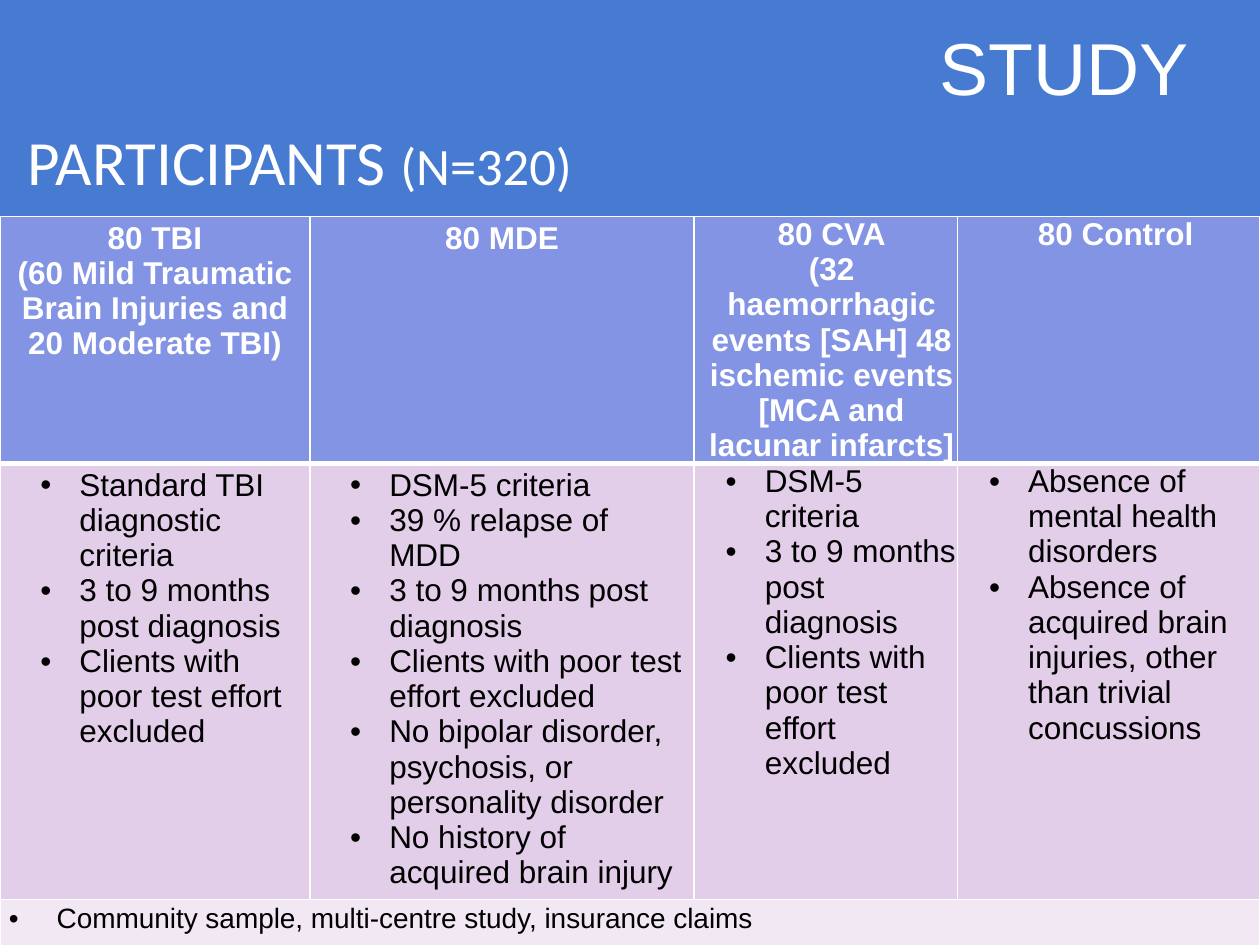
from dataclasses import dataclass

from lxml.etree import SubElement
from pptx import Presentation
from pptx.dml.color import RGBColor
from pptx.enum.shapes import MSO_SHAPE as Shape
from pptx.enum.text import MSO_ANCHOR as Anchor, MSO_AUTO_SIZE as AutoSize, PP_ALIGN as Align
from pptx.oxml import parse_xml
from pptx.oxml.ns import nsdecls, qn
from pptx.util import Inches, Pt

WIDTH, HEIGHT = 10, 7.5
BLUE, WHITE, BLACK = "477BD1", "FFFFFF", "000000"
HEADER, BODY, FOOTER = "8394E4", "E3CEE9", "F1E8F4"
COLUMN_SHARES = (0.246, 0.305, 0.209, 0.24)
ROW_HEIGHTS = (1.58, 3.46, 0.53)


@dataclass
class Group:
    heading: list[str]
    criteria: list[str]
    heading_indent: float = 0
    padded: bool = True


@dataclass
class Style:
    size: float
    color: str
    bold: bool = False
    align: Align = Align.LEFT
    margin: float = 0
    hanging: float = 0
    bullet: bool = False


EFFORT = "Clients with poor test effort excluded"
MONTHS = "3 to 9 months post diagnosis"
GROUPS = [
    Group(["80 TBI", "(60 Mild Traumatic Brain Injuries and 20 Moderate TBI)"],
          ["Standard TBI diagnostic criteria", MONTHS, EFFORT]),
    Group(["80 MDE"],
          ["DSM-5 criteria", "39 % relapse of MDD", MONTHS, EFFORT,
           "No bipolar disorder, psychosis, or personality disorder",
           "No history of acquired brain injury"]),
    Group(["80 CVA", "(32 haemorrhagic events [SAH] 48 ischemic events "
           "[MCA and lacunar infarcts]"],
          ["DSM-5 criteria", MONTHS, EFFORT], 0.09, False),
    Group(["80 Control"],
          ["Absence of mental health disorders",
           "Absence of acquired brain injuries, other than trivial concussions"],
          0.11, False),
]
SAMPLE = "Community sample, multi-centre study, insurance claims"


def rgb(color: str) -> RGBColor:
    return RGBColor.from_string(color)


def paint(part, color: str) -> None:
    part.fill.solid()
    part.fill.fore_color.rgb = rgb(color)


def place(shape, left: float, top: float, width: float, height: float) -> None:
    """Position a shape by shares of the slide's size."""
    shape.left, shape.width = Inches(left * WIDTH), Inches(width * WIDTH)
    shape.top, shape.height = Inches(top * HEIGHT), Inches(height * HEIGHT)


def add_run(paragraph, text: str, size: float, color: str, font: str = "Arial",
            bold: bool = False) -> None:
    run = paragraph.add_run()
    run.text = text
    run.font.size, run.font.name, run.font.bold = Pt(size), font, bold
    run.font.color.rgb = rgb(color)


def fill_cell(cell, lines: list[str], style: Style, fill: str, padded: bool = True) -> None:
    paint(cell, fill)
    cell.margin_left = cell.margin_right = Inches(0.07 if padded else 0)
    cell.margin_top = cell.margin_bottom = Inches(0.03 if padded else 0)
    frame = cell.text_frame
    for index, line in enumerate(lines):
        paragraph = frame.add_paragraph() if index else frame.paragraphs[0]
        paragraph.alignment = style.align
        properties = paragraph._p.get_or_add_pPr()
        properties.set("marL", str(Inches(style.margin)))
        properties.set("indent", str(Inches(-style.hanging)))
        if style.bullet:
            SubElement(properties, qn("a:buFont")).set("typeface", "Arial")
            SubElement(properties, qn("a:buChar")).set("char", "•")
        add_run(paragraph, line, style.size, style.color, bold=style.bold)


def set_borders(cell, top: float, bottom: float) -> None:
    properties = cell._tc.get_or_add_tcPr()
    widths = {"lnL": 1, "lnR": 1, "lnT": top, "lnB": bottom}
    for index, (side, width) in enumerate(widths.items()):
        properties.insert(index, parse_xml(
            f'<a:{side} {nsdecls("a")} w="{Pt(width)}"><a:solidFill>'
            f'<a:srgbClr val="{WHITE}"/></a:solidFill></a:{side}>'))


def add_participants(slide) -> None:
    table = slide.shapes.add_table(
        len(ROW_HEIGHTS), len(GROUPS), 0, Inches(1.72),
        Inches(WIDTH), Inches(sum(ROW_HEIGHTS))).table
    for column, share in zip(table.columns, COLUMN_SHARES):
        column.width = Inches(share * WIDTH)
    for row, height in zip(table.rows, ROW_HEIGHTS):
        row.height = Inches(height)

    # Group headings above their criteria
    criteria_style = Style(18, BLACK, margin=0.56, hanging=0.31, bullet=True)
    for column, group in enumerate(GROUPS):
        heading_style = Style(18, WHITE, True, Align.CENTER, group.heading_indent)
        fill_cell(table.cell(0, column), group.heading, heading_style, HEADER, group.padded)
        fill_cell(table.cell(1, column), group.criteria, criteria_style, BODY, group.padded)

    # Sample description across all groups
    sample = table.cell(2, 0)
    sample.merge(table.cell(2, len(GROUPS) - 1))
    fill_cell(sample, [SAMPLE], Style(16, BLACK, margin=0.38, hanging=0.38, bullet=True), FOOTER)

    # White grid, heavier under the headings
    for index, row in enumerate(table.rows):
        for cell in row.cells:
            set_borders(cell, 3 if index == 1 else 1, 3 if index == 0 else 1)


def main() -> None:
    deck = Presentation()
    deck.slide_width, deck.slide_height = Inches(WIDTH), Inches(HEIGHT)
    slide = deck.slides.add_slide(deck.slide_layouts[5])
    paint(slide.background, BLUE)

    # Title
    title = slide.shapes.title
    place(title, 0.012, 0.11, 0.85, 0.12)
    paint(title, BLUE)
    title.text_frame.auto_size = AutoSize.NONE
    title.text_frame.vertical_anchor = Anchor.MIDDLE
    heading = title.text_frame.paragraphs[0]
    heading.alignment = Align.LEFT
    add_run(heading, "PARTICIPANTS ", 36, WHITE, "Calibri")
    add_run(heading, "(N=320)", 30, WHITE, "Calibri")

    add_participants(slide)

    # Section label
    section = slide.shapes.add_shape(Shape.RECTANGLE, 0, 0, 0, 0)
    place(section, 0.736, 0.017, 0.252, 0.108)
    paint(section, BLUE)
    section.line.fill.background()
    section.shadow.inherit = False
    section.text_frame.word_wrap = True
    section.text_frame.auto_size = AutoSize.SHAPE_TO_FIT_TEXT
    section.text_frame.vertical_anchor = Anchor.TOP
    label = section.text_frame.paragraphs[0]
    label.alignment = Align.LEFT
    add_run(label, "STUDY", 42, WHITE)

    deck.save("out.pptx")


if __name__ == "__main__":
    main()
